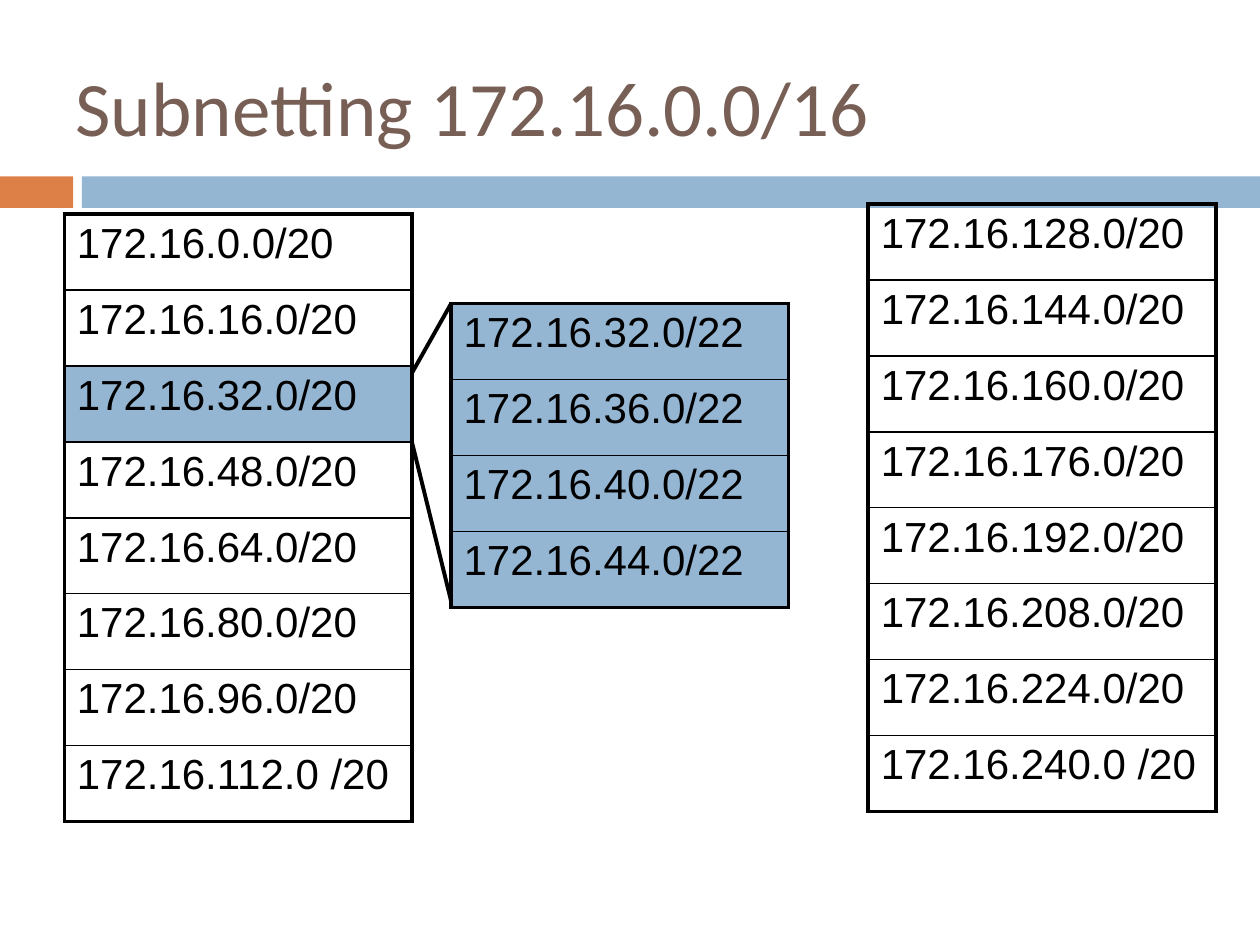
from lxml import etree
from pptx import Presentation
from pptx.dml.color import RGBColor
from pptx.enum import shapes, text
from pptx.oxml.ns import qn
from pptx.util import Inches, Pt

BLACK = RGBColor(0x00, 0x00, 0x00)
BLUE = RGBColor(0x94, 0xB6, 0xD2)
ORANGE = RGBColor(0xDD, 0x80, 0x47)
BROWN = RGBColor(0x77, 0x5F, 0x55)

# Content
TITLE = "Subnetting 172.16.0.0/16"
LOW_BLOCKS = ["172.16.0.0/20", "172.16.16.0/20", "172.16.32.0/20", "172.16.48.0/20",
              "172.16.64.0/20", "172.16.80.0/20", "172.16.96.0/20", "172.16.112.0 /20"]
SPLIT_BLOCKS = ["172.16.32.0/22", "172.16.36.0/22", "172.16.40.0/22", "172.16.44.0/22"]
HIGH_BLOCKS = ["172.16.128.0/20", "172.16.144.0/20", "172.16.160.0/20", "172.16.176.0/20",
               "172.16.192.0/20", "172.16.208.0/20", "172.16.224.0/20", "172.16.240.0 /20"]
SPLIT = "172.16.32.0/20"

# Left, top, width, blocks, highlighted blocks
TABLES = [
    (0.51, 1.7, 2.76, LOW_BLOCKS, [SPLIT]),
    (3.58, 2.41, 2.68, SPLIT_BLOCKS, SPLIT_BLOCKS),
    (6.89, 1.62, 2.76, HIGH_BLOCKS, []),
]
BANDS = [(0, 0.58, ORANGE), (0.65, 9.35, BLUE)]
ZOOM_LINES = [(3.27, 2.96, 3.58, 2.41), (3.27, 3.51, 3.58, 4.77)]
ROW_HEIGHT = Inches(4.82) // 8
THICK, THIN = 2.25, 1


def style(r, **fmt):
    color = fmt.pop("color")
    for name, value in fmt.items():
        setattr(r.font, name, value)
    r.font.color.rgb = color


def set_borders(cell, widths):
    tc_pr = cell._tc.get_or_add_tcPr()
    for i, (side, width) in enumerate(widths.items()):
        ln = etree.Element(qn("a:ln" + side), w=str(Pt(width)))
        fill = etree.SubElement(ln, qn("a:solidFill"))
        etree.SubElement(fill, qn("a:srgbClr"), val=str(BLACK))
        tc_pr.insert(i, ln)


def add_block_table(s, left, top, width, blocks, highlighted):
    table = s.shapes.add_table(len(blocks), 1, Inches(left), Inches(top),
                               Inches(width), ROW_HEIGHT * len(blocks)).table
    table.first_row = table.horz_banding = False
    last = len(blocks) - 1
    for i, block in enumerate(blocks):
        table.rows[i].height = ROW_HEIGHT
        cell = table.cell(i, 0)
        r = cell.text_frame.paragraphs[0].add_run()
        r.text = block
        style(r, name="Arial", size=Pt(24), bold=False, color=BLACK)
        set_borders(cell, {"L": THICK, "R": THICK,
                           "T": THICK if i == 0 else THIN,
                           "B": THICK if i == last else THIN})
        if block in highlighted:
            cell.fill.solid()
            cell.fill.fore_color.rgb = BLUE
        else:
            cell.fill.background()


prs = Presentation()
prs.slide_width, prs.slide_height = Inches(10), Inches(7.5)
s = prs.slides.add_slide(prs.slide_layouts[5])

# Title
title = s.shapes.title
title.left, title.top, title.width, title.height = map(Inches, (0.5, 0.13, 8.25, 1.42))
tf = title.text_frame
tf.vertical_anchor = text.MSO_ANCHOR.MIDDLE
p = tf.paragraphs[0]
p.alignment = text.PP_ALIGN.LEFT
r = p.add_run()
r.text = TITLE
style(r, name="Calibri", size=Pt(44), color=BROWN)

# Coloured bands under the title
for left, width, color in BANDS:
    band = s.shapes.add_shape(shapes.MSO_SHAPE.RECTANGLE, Inches(left), Inches(1.4),
                              Inches(width), Inches(0.25))
    band.shadow.inherit = False
    band.fill.solid()
    band.fill.fore_color.rgb = color
    band.line.fill.background()

# Address tables
for spec_row in TABLES:
    add_block_table(s, *spec_row)

# Lines from the split block to its subnets
for ends in ZOOM_LINES:
    line = s.shapes.add_connector(shapes.MSO_CONNECTOR.STRAIGHT, *map(Inches, ends))
    line.line.color.rgb = BLACK
    line.line.width = Pt(THICK)
    etree.SubElement(line._element.spPr, qn("a:effectLst"))

prs.save("out.pptx")
